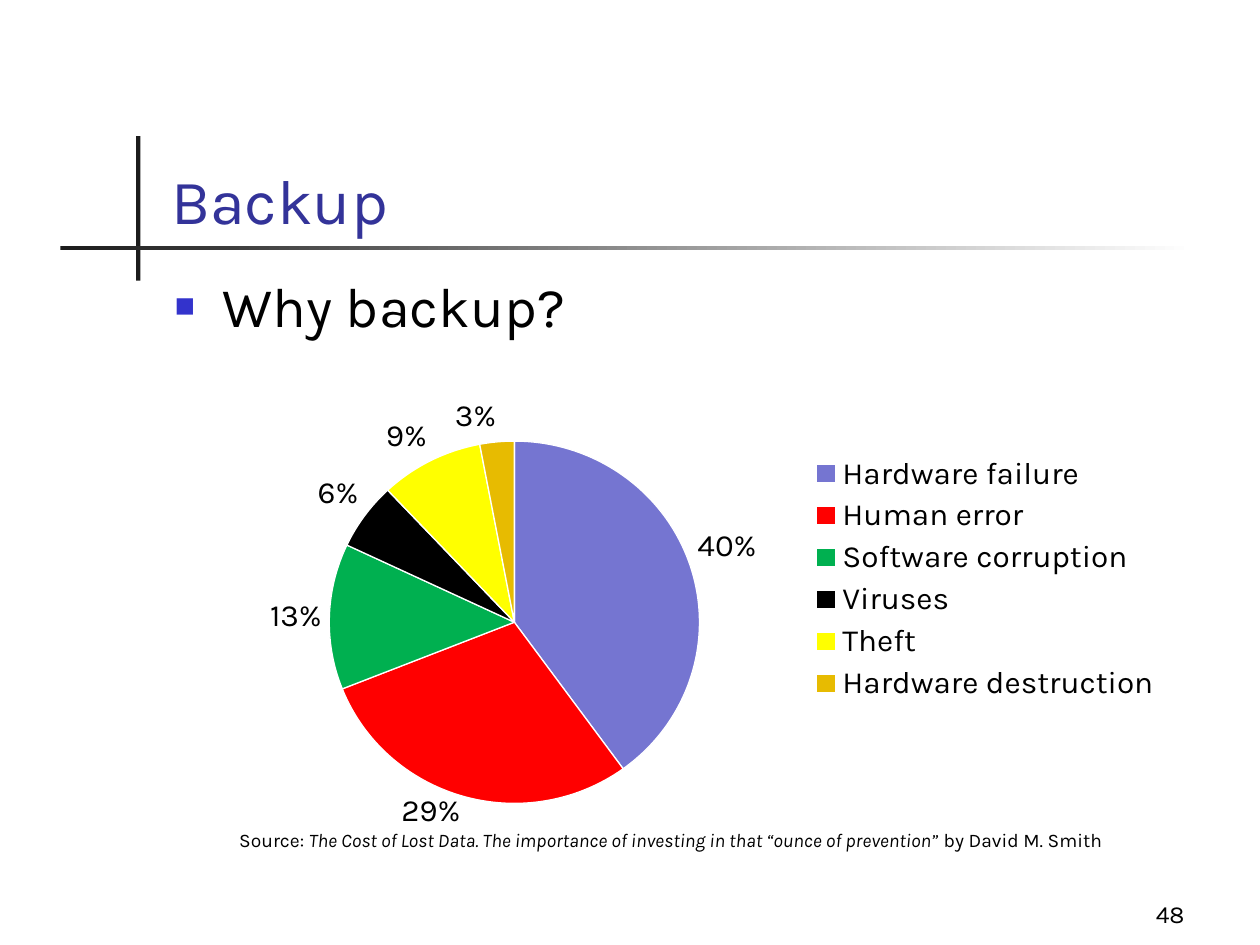
"""Build the slide on backup: a pie chart of the causes of data loss."""
from lxml.etree import SubElement
from pptx import Presentation
from pptx.chart.data import CategoryChartData
from pptx.dml.color import RGBColor
from pptx.enum.chart import XL_CHART_TYPE as ChartType, XL_LABEL_POSITION as LabelPosition
from pptx.enum.chart import XL_LEGEND_POSITION as LegendPosition
from pptx.enum.shapes import MSO_SHAPE as Shape
from pptx.enum.text import MSO_ANCHOR as Anchor, PP_ALIGN as Align
from pptx.oxml.ns import qn
from pptx.util import Inches, Pt

FONT = "Karla"
INK, BLACK, WHITE = "1C1C1C", "000000", "FFFFFF"

presentation = Presentation()
presentation.slide_width, presentation.slide_height = Inches(10), Inches(7.5)
column, row = presentation.slide_width / 100, presentation.slide_height / 100
slide = presentation.slides.add_slide(presentation.slide_layouts[6])


def color(value):
    return RGBColor.from_string(value)


def place(left, top, width, height):
    return [round(size) for size in (left * column, top * row, width * column, height * row)]


rules = [
    ((10.8, 14.4, 0.35, 15.3), (INK, INK)),
    ((4.8, 26, 90, 0.45), (INK, WHITE)),
]
for area, (start, end) in rules:
    rule = slide.shapes.add_shape(Shape.RECTANGLE, *place(*area))
    rule.shadow.inherit = False
    rule.line.fill.background()
    if start == end:
        rule.fill.solid()
        rule.fill.fore_color.rgb = color(start)
    else:
        rule.fill.gradient()
        rule.fill.gradient_angle = 0
        for stop, shade in zip(rule.fill.gradient_stops, (start, end)):
            stop.color.rgb = color(shade)

causes = [
    ("Hardware failure", 0.40, "7575D1"),
    ("Human error", 0.29, "FF0000"),
    ("Software corruption", 0.13, "00B050"),
    ("Viruses", 0.06, BLACK),
    ("Theft", 0.09, "FFFF00"),
    ("Hardware destruction", 0.03, "E7BB01"),
]
names, shares, shades = zip(*causes)
data = CategoryChartData(number_format="0%")
data.categories = names
data.add_series("Series 1", shares)
chart = slide.shapes.add_chart(ChartType.PIE, *place(13, 41.6, 79.5, 47.2), data).chart
chart.has_title = False
chart.has_legend = True
chart.legend.position = LegendPosition.RIGHT
chart.legend.include_in_layout = False
chart.font.name, chart.font.size = FONT, Pt(18)
chart.font.color.rgb = color(BLACK)

plot = chart.plots[0]
plot.vary_by_categories = True
plot.has_data_labels = True
label_format = {
    "show_value": True,
    "show_percentage": False,
    "number_format": "0%",
    "number_format_is_linked": False,
    "position": LabelPosition.OUTSIDE_END,
}
for name, value in label_format.items():
    setattr(plot.data_labels, name, value)
for index, shade in enumerate(shades):
    point = plot.series[0].points[index].format
    point.fill.solid()
    point.fill.fore_color.rgb = color(shade)
    point.line.color.rgb = color(WHITE)
    point.line.width = Pt(0.75)

chart_parts = [
    (plot._element.getparent(), 0, {"layoutTarget": "inner"}, (0.16, 0.11, 0.38, 0.83)),
    (chart.legend._element, 1, {}, (0.64, 0.13, 0.36, 0.59)),
]
for part, position, target, area in chart_parts:
    for old_layout in part.findall(qn("c:layout")):
        part.remove(old_layout)
    layout = SubElement(part, qn("c:layout"))
    part.insert(position, layout)
    manual = SubElement(layout, qn("c:manualLayout"))
    settings = {**target, "xMode": "edge", "yMode": "edge", **dict(zip("xywh", area))}
    for name, value in settings.items():
        SubElement(manual, qn(f"c:{name}")).set("val", str(value))

source_runs = [
    ("Source: ", False),
    ("The Cost of Lost Data. The importance of investing in that “ounce of prevention” ", True),
    ("by David M. Smith", False),
]
texts = [
    ((12.6, 9, 85.2, 16.7), [("Backup", False)], 36, "333399", Anchor.BOTTOM, Align.LEFT, False),
    ((12.9, 29.5, 85, 9), [("Why backup?", False)], 32, BLACK, Anchor.TOP, Align.LEFT, True),
    ((18, 86.6, 76, 4.6), source_runs, 11, BLACK, Anchor.MIDDLE, Align.LEFT, False),
    ((74.2, 92.2, 20.8, 6.7), [("48", False)], 14, BLACK, Anchor.BOTTOM, Align.RIGHT, False),
]
for area, runs, size, shade, anchor, alignment, bulleted in texts:
    frame = slide.shapes.add_textbox(*place(*area)).text_frame
    frame.word_wrap = True
    frame.vertical_anchor = anchor
    paragraph = frame.paragraphs[0]
    paragraph.alignment = alignment
    if bulleted:
        paragraph.line_spacing = 0.8
        properties = paragraph._p.get_or_add_pPr()
        properties.set("marL", str(Inches(0.38)))
        properties.set("indent", str(-Inches(0.38)))
        bullet_color = SubElement(properties, qn("a:buClr"))
        SubElement(bullet_color, qn("a:srgbClr")).set("val", "3333CC")
        SubElement(properties, qn("a:buSzPct")).set("val", "38000")
        SubElement(properties, qn("a:buFont")).set("typeface", FONT)
        SubElement(properties, qn("a:buChar")).set("char", "■")
    for text, italic in runs:
        run = paragraph.add_run()
        run.text = text
        font_format = {"name": FONT, "size": Pt(size), "italic": italic}
        for name, value in font_format.items():
            setattr(run.font, name, value)
        run.font.color.rgb = color(shade)

presentation.save("out.pptx")
